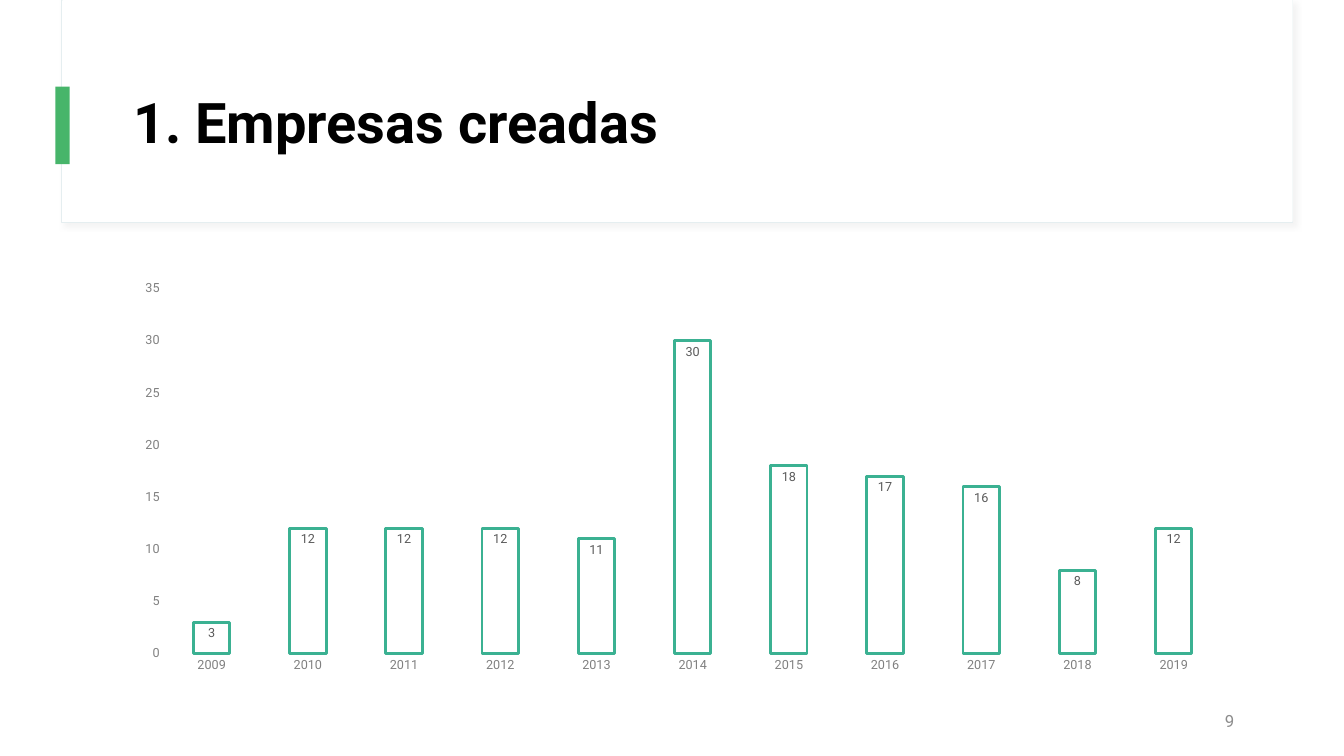
from lxml.etree import SubElement
from pptx import Presentation
from pptx.chart.data import CategoryChartData
from pptx.dml.color import RGBColor
from pptx.enum.chart import XL_CHART_TYPE as ChartType, XL_LABEL_POSITION as LabelPos, XL_TICK_MARK as TickMark
from pptx.enum.shapes import MSO_SHAPE as Preset
from pptx.enum.text import MSO_ANCHOR as Anchor, MSO_AUTO_SIZE as AutoSize, PP_ALIGN as Align
from pptx.oxml.ns import qn
from pptx.util import Pt

PX = 9144
FONT = "Roboto"
COLORS = {
    "white": "FFFFFF", "black": "000000", "green": "47B56A", "teal": "3BB192",
    "frame": "E5EEF0", "shadow": "D9D9D9", "axis": "808080", "label": "595959",
    "number": "8C8C8C",
}


def rgb(name):
    return RGBColor.from_string(COLORS[name])


def style(font, size, color, bold=False):
    font.name = FONT
    font.size = Pt(size)
    font.bold = bold
    font.color.rgb = rgb(color)


deck = Presentation()
deck.slide_width, deck.slide_height = 1333 * PX, 750 * PX
slide = deck.slides.add_slide(deck.slide_layouts[5])

panels = []
for left, top, width, height, color in [
    (61, 0, 1221, 221, "white"),
    (62, 0, 1220, 220, "white"),
    (55, 86, 14, 77, "green"),
]:
    panel = slide.shapes.add_shape(Preset.RECTANGLE, left * PX, top * PX, width * PX, height * PX)
    panel.shadow.inherit = False
    panel.fill.solid()
    panel.fill.fore_color.rgb = rgb(color)
    panel.line.fill.background()
    panels.append(panel)

header_frame = panels[0]
header_frame.line.color.rgb = rgb("frame")
header_frame.line.width = Pt(0.75)
effects = header_frame._element.spPr.find(qn("a:effectLst"))
shadow = SubElement(effects, qn("a:outerShdw"), blurRad=str(Pt(4)), dist=str(Pt(3)),
                    dir="2700000", algn="tl", rotWithShape="0")
shadow_color = SubElement(shadow, qn("a:srgbClr"), val=COLORS["shadow"])
SubElement(shadow_color, qn("a:alpha"), val="30000")

title = slide.shapes.title
slide.shapes._spTree.append(title._element)
title.left, title.top, title.width, title.height = 122 * PX, 60 * PX, 1112 * PX, 129 * PX
title.text_frame.text = "1. Empresas creadas"
title.text_frame.auto_size = AutoSize.NONE
title.text_frame.vertical_anchor = Anchor.MIDDLE
heading = title.text_frame.paragraphs[0]
heading.alignment = Align.LEFT
heading.line_spacing = 0.9
style(heading.font, 40, "black", True)

companies = CategoryChartData()
companies.categories = [str(year) for year in range(2009, 2020)]
companies.add_series("Series 1", (3, 12, 12, 12, 11, 30, 18, 17, 16, 8, 12))
chart = slide.shapes.add_chart(ChartType.COLUMN_CLUSTERED, 122 * PX, 271 * PX,
                               1112 * PX, 404 * PX, companies).chart
style(chart.font, 10, "black")
chart.has_legend = False
chart.has_title = False

for axis in (chart.category_axis, chart.value_axis):
    axis.has_major_gridlines = False
    axis.major_tick_mark = axis.minor_tick_mark = TickMark.NONE
    axis.format.line.fill.background()
    style(axis.tick_labels.font, 9, "axis")
chart.value_axis.minimum_scale = 0
chart.value_axis.maximum_scale = 35
chart.value_axis.major_unit = 5

columns = chart.plots[0]
columns.vary_by_categories = False
columns.gap_width = 164
columns.overlap = -35
bars = columns.series[0]
bars.format.fill.background()
bars.format.line.color.rgb = rgb("teal")
bars.format.line.width = Pt(2)
bar_labels = bars.data_labels
bar_labels.show_value = True
bar_labels.position = LabelPos.INSIDE_END
style(bar_labels.font, 9, "label")

page_number = slide.shapes.add_textbox(934 * PX, 695 * PX, 300 * PX, 40 * PX).text_frame
page_number.word_wrap = True
page_number.vertical_anchor = Anchor.MIDDLE
page_number.text = "9"
page_number.paragraphs[0].alignment = Align.RIGHT
style(page_number.paragraphs[0].font, 12, "number")

deck.save("out.pptx")
